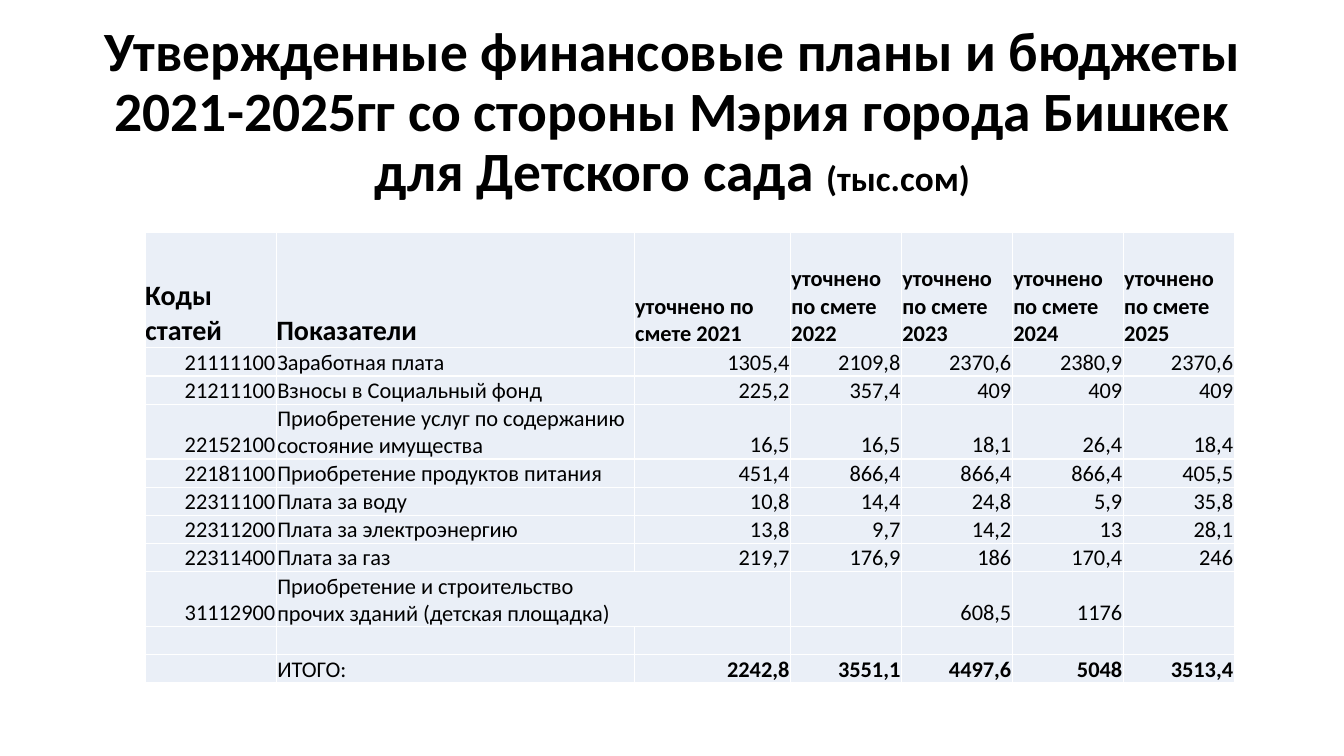
from lxml.etree import SubElement
from pptx import Presentation
from pptx.dml.color import RGBColor
from pptx.enum.text import MSO_ANCHOR, PP_ALIGN
from pptx.oxml.ns import qn
from pptx.util import Pt

PX = 9144  # 100 px to the inch
BLACK = RGBColor(0x00, 0x00, 0x00)
WHITE = RGBColor(0xFF, 0xFF, 0xFF)
PALE_BLUE = RGBColor(0xEA, 0xEF, 0xF7)
FONT = "Calibri"

COLUMN_WIDTHS = [130, 355, 155] + [110] * 4
HEADER_HEIGHT, LINE_HEIGHT, DOUBLE_HEIGHT = 114, 28, 53
DOUBLE_ROWS = (3, 8)
BUILDING_ROW = 8

ROWS = [
    ["Коды статей", "Показатели"] + [f"уточнено по смете {year}" for year in range(2021, 2026)],
    ["21111100", "Заработная плата", "1305,4", "2109,8", "2370,6", "2380,9", "2370,6"],
    ["21211100", "Взносы в Социальный фонд", "225,2", "357,4", "409", "409", "409"],
    ["22152100", "Приобретение услуг по содержанию состояние имущества",
     "16,5", "16,5", "18,1", "26,4", "18,4"],
    ["22181100", "Приобретение продуктов питания", "451,4", "866,4", "866,4", "866,4", "405,5"],
    ["22311100", "Плата за воду", "10,8", "14,4", "24,8", "5,9", "35,8"],
    ["22311200", "Плата за электроэнергию", "13,8", "9,7", "14,2", "13", "28,1"],
    ["22311400", "Плата за газ", "219,7", "176,9", "186", "170,4", "246"],
    ["31112900", "Приобретение и строительство\nпрочих зданий (детская площадка)",
     "", "", "608,5", "1176", ""],
    [""] * 7,
    ["", "ИТОГО:", "2242,8", "3551,1", "4497,6", "5048", "3513,4"],
]
TOTAL_ROW = len(ROWS) - 1


def add_borders(cell):
    tcPr = cell._tc.get_or_add_tcPr()
    for side in ("a:lnL", "a:lnR", "a:lnT", "a:lnB"):
        ln = SubElement(tcPr, qn(side), w=str(Pt(1)))
        fill = SubElement(ln, qn("a:solidFill"))
        SubElement(fill, qn("a:srgbClr"), val=str(WHITE))


prs = Presentation()
prs.slide_width, prs.slide_height = 1333 * PX, 750 * PX
s = prs.slides.add_slide(prs.slide_layouts[6])

# Title
tf = s.shapes.add_textbox(92 * PX, 40 * PX, 1150 * PX, 145 * PX).text_frame
tf.word_wrap = True
tf.vertical_anchor = MSO_ANCHOR.MIDDLE
p = tf.paragraphs[0]
p.alignment = PP_ALIGN.CENTER
p.line_spacing = 0.9
p.font.name, p.font.bold, p.font.color.rgb = FONT, True, BLACK
for text, size in [
    ("Утвержденные финансовые планы и бюджеты 2021-2025гг "
     "со стороны Мэрия города Бишкек для Детского сада ", 39.6),
    ("(тыс.сом)", 25.2),
]:
    r = p.add_run()
    r.text, r.font.size = text, Pt(size)

# Budget table
heights = [HEADER_HEIGHT] + [DOUBLE_HEIGHT if i in DOUBLE_ROWS else LINE_HEIGHT
                             for i in range(1, len(ROWS))]
table = s.shapes.add_table(len(ROWS), len(COLUMN_WIDTHS), 144 * PX, 231 * PX,
                           sum(COLUMN_WIDTHS) * PX, sum(heights) * PX).table
table.first_row = table.horz_banding = False
for column, width in zip(table.columns, COLUMN_WIDTHS):
    column.width = width * PX
for row, height in zip(table.rows, heights):
    row.height = height * PX
table.cell(BUILDING_ROW, 1).merge(table.cell(BUILDING_ROW, 2))

for i, values in enumerate(ROWS):
    for j, value in enumerate(values):
        cell = table.cell(i, j)
        large_heading = i == 0 and j < 2
        cell.margin_left = cell.margin_right = cell.margin_top = 0 if large_heading else PX
        cell.margin_bottom = 0
        cell.vertical_anchor = MSO_ANCHOR.BOTTOM
        add_borders(cell)
        cell.fill.solid()
        cell.fill.fore_color.rgb = PALE_BLUE
        cell.text = value
        for p in cell.text_frame.paragraphs:
            p.alignment = PP_ALIGN.LEFT if i == 0 or j == 1 else PP_ALIGN.RIGHT
            p.font.name, p.font.color.rgb = FONT, BLACK
            p.font.size = Pt(20 if large_heading else 16)
            p.font.bold = i == 0 or (i == TOTAL_ROW and j > 1)
            if not value:  # keeps empty cells from stretching their row
                p._p.get_or_add_endParaRPr().set("sz", "1600")

prs.save("out.pptx")
